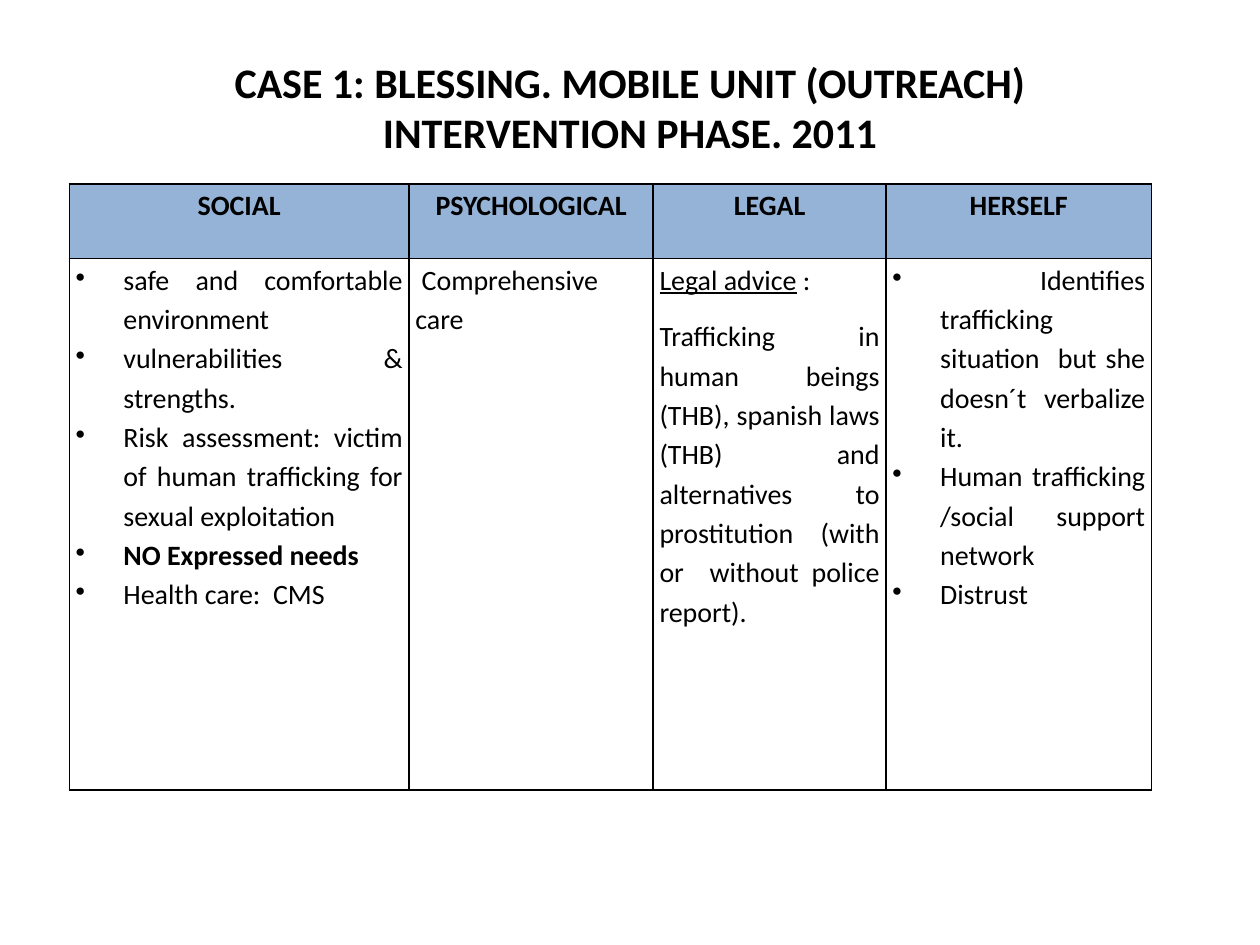
from dataclasses import dataclass

from lxml.etree import SubElement
from pptx import Presentation
from pptx.dml.color import RGBColor
from pptx.enum.text import MSO_ANCHOR, MSO_AUTO_SIZE, PP_ALIGN
from pptx.oxml.ns import qn
from pptx.util import Inches, Pt


@dataclass(frozen=True)
class Theme:
    """Colours, font and type sizes of the slide."""
    font: str = "Calibri"
    ink: RGBColor = RGBColor(0, 0, 0)
    header: RGBColor = RGBColor(0x95, 0xB3, 0xD7)
    title_size: int = 24
    table_size: int = 16
    border: int = 1


THEME = Theme()
TITLE = ["CASE 1: BLESSING. MOBILE UNIT (OUTREACH)", " INTERVENTION PHASE. 2011 "]
COLUMN_WIDTHS = [2.7, 1.94, 1.85, 2.11]
ROW_HEIGHTS = [0.59, 4.22]
HEADINGS = ["SOCIAL", "PSYCHOLOGICAL", "LEGAL", "HERSELF"]
SOCIAL = [
    "safe and comfortable environment ",
    "vulnerabilities & strengths.",
    "Risk assessment: victim of human trafficking for sexual exploitation ",
    [("NO Expressed needs", {"bold": True})],
    "Health care:  CMS",
]
PSYCHOLOGICAL = ["\u00a0Comprehensive care"]
LEGAL = [
    [("Legal advice", {"underline": True}), (" : ", {})],
    "Trafficking in human beings (THB), spanish laws (THB) and alternatives "
    "to prostitution (with or  without police report).",
]
HERSELF = [
    " Identifies trafficking situation  but she doesn´t verbalize it.",
    "Human trafficking /social support network",
    "Distrust",
]
CONTENTS = [
    (SOCIAL, {"bullet": True}),
    (PSYCHOLOGICAL, {}),
    (LEGAL, {"space_after": 10}),
    (HERSELF, {"bullet": True}),
]


def write_text(frame, lines, size=THEME.table_size, bold=False, align=PP_ALIGN.JUSTIFY,
               line_spacing=1.15, space_after=0, bullet=False):
    """Write lines, each a string or a list of (text, font settings), into a frame."""
    for index, line in enumerate(lines):
        paragraph = frame.add_paragraph() if index else frame.paragraphs[0]
        paragraph.alignment = align
        paragraph.line_spacing = line_spacing
        paragraph.space_before = Pt(0)
        paragraph.space_after = Pt(space_after)
        if bullet:
            properties = paragraph._p.get_or_add_pPr()
            properties.set("marL", str(Inches(0.38)))
            properties.set("indent", str(-Inches(0.38)))
            SubElement(properties, qn("a:buChar"), char="•")
        for text, settings in [(line, {})] if isinstance(line, str) else line:
            run = paragraph.add_run()
            run.text = text
            run.font.name = THEME.font
            run.font.size = Pt(size)
            run.font.color.rgb = THEME.ink
            run.font.bold = settings.get("bold", bold)
            run.font.underline = settings.get("underline", False)


def format_cell(cell, fill=None):
    """Give a cell its margins, borders and fill."""
    cell.margin_left = cell.margin_right = Inches(0.05)
    cell.margin_top = cell.margin_bottom = 0
    properties = cell._tc.get_or_add_tcPr()
    for side in ("lnL", "lnR", "lnT", "lnB"):
        border = SubElement(properties, qn(f"a:{side}"), w=str(Pt(THEME.border)))
        stroke = SubElement(border, qn("a:solidFill"))
        SubElement(stroke, qn("a:srgbClr"), val=str(THEME.ink))
    if fill is None:
        cell.fill.background()
    else:
        cell.fill.solid()
        cell.fill.fore_color.rgb = fill


def place_title(slide, left, top, width, height):
    """Fill the title placeholder and move it into its box."""
    title = slide.shapes.title
    title.left, title.top, title.width, title.height = left, top, width, height
    title.text_frame.auto_size = MSO_AUTO_SIZE.NONE
    title.text_frame.vertical_anchor = MSO_ANCHOR.MIDDLE
    write_text(title.text_frame, TITLE, size=THEME.title_size, bold=True,
               align=PP_ALIGN.CENTER, line_spacing=1.0)


def place_intervention_table(slide, left, top, width, height):
    """Draw the intervention table in its box, scaling columns and rows to fit."""
    table = slide.shapes.add_table(
        len(ROW_HEIGHTS), len(COLUMN_WIDTHS), left, top, width, height).table
    table.first_row = table.horz_banding = False
    for column, share in zip(table.columns, COLUMN_WIDTHS):
        column.width = int(width * share / sum(COLUMN_WIDTHS))
    for row, share in zip(table.rows, ROW_HEIGHTS):
        row.height = int(height * share / sum(ROW_HEIGHTS))
    for index, (heading, (lines, layout)) in enumerate(zip(HEADINGS, CONTENTS)):
        header, body = table.cell(0, index), table.cell(1, index)
        format_cell(header, fill=THEME.header)
        write_text(header.text_frame, [heading], bold=True, align=PP_ALIGN.CENTER)
        format_cell(body)
        write_text(body.text_frame, lines, **layout)


def main():
    """Build the case slide and save it."""
    presentation = Presentation()
    presentation.slide_width, presentation.slide_height = Inches(10), Inches(7.5)
    slide = presentation.slides.add_slide(presentation.slide_layouts[5])
    place_title(slide, Inches(0), Inches(0.39), Inches(10), Inches(0.91))
    place_intervention_table(slide, Inches(0.55), Inches(1.46), Inches(8.59), Inches(4.81))
    presentation.save("out.pptx")


if __name__ == "__main__":
    main()
